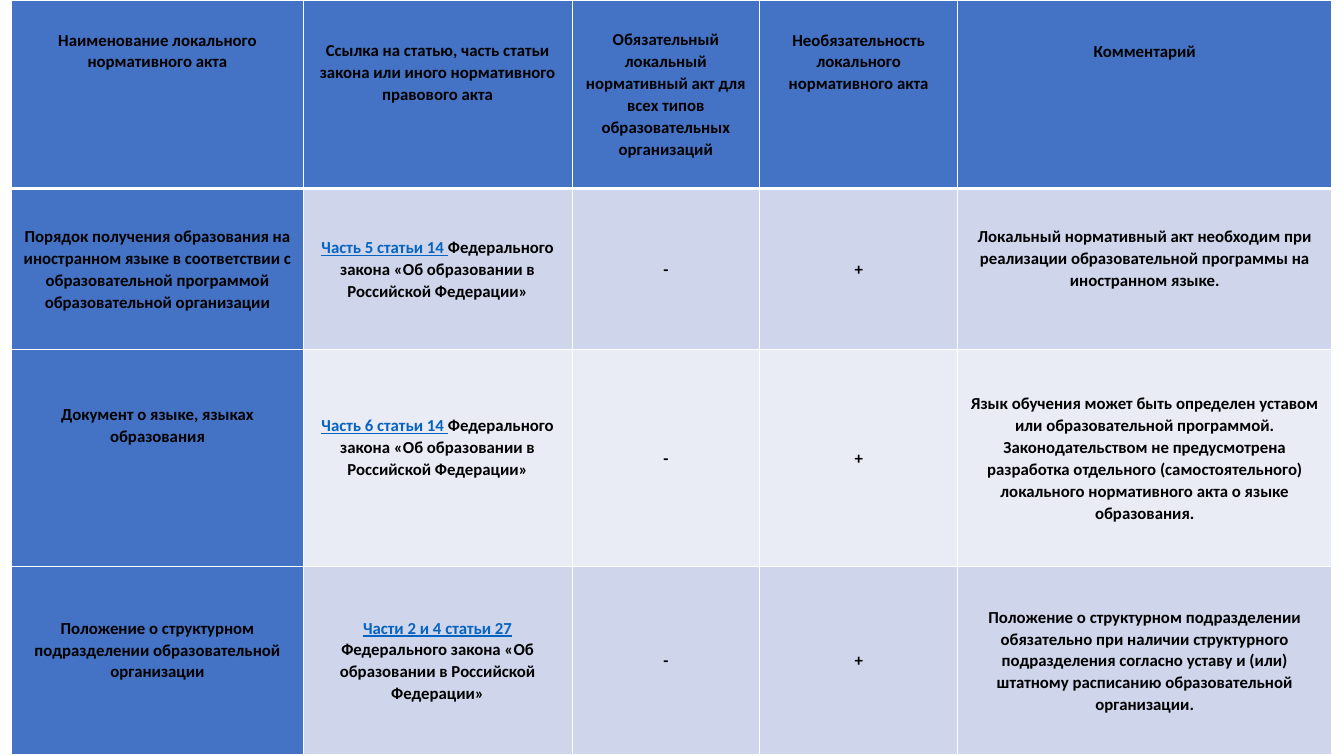
from dataclasses import dataclass

from lxml.etree import SubElement
from pptx import Presentation
from pptx.dml.color import RGBColor
from pptx.enum.text import MSO_ANCHOR, PP_ALIGN
from pptx.oxml.ns import qn
from pptx.slide import Slide
from pptx.util import Cm, Pt

BLUE = RGBColor(0x44, 0x72, 0xC4)
BAND_DARK = RGBColor(0xCF, 0xD5, 0xEA)
BAND_LIGHT = RGBColor(0xE9, 0xEB, 0xF5)
LINK = RGBColor(0x05, 0x63, 0xC1)
BLACK = RGBColor(0, 0, 0)
WHITE = RGBColor(0xFF, 0xFF, 0xFF)

COLUMN_WIDTHS = [7.34, 6.78, 4.72, 5.0, 9.42]
ROW_HEIGHTS = [4.75, 4.06, 5.46, 4.75]
LAW = "Федерального закона «Об образовании в Российской Федерации»"

HEADER = [
    "Наименование локального нормативного акта",
    "Ссылка на статью, часть статьи закона или иного нормативного правового акта",
    "Обязательный локальный нормативный акт для всех типов образовательных организаций",
    "Необязательность локального нормативного акта",
    "Комментарий",
]
ACTS = [
    (
        "Порядок получения образования на иностранном языке в соответствии с "
        "образовательной программой образовательной организации",
        "Часть 5 статьи 14 ",
        "Локальный нормативный акт необходим при реализации образовательной "
        "программы на иностранном языке.",
    ),
    (
        "Документ о языке, языках образования",
        "Часть 6 статьи 14 ",
        "Язык обучения может быть определен уставом или образовательной программой. "
        "Законодательством не предусмотрена разработка отдельного (самостоятельного) "
        "локального нормативного акта о языке образования.",
    ),
    (
        "Положение о структурном подразделении образовательной организации",
        "Части 2 и 4 статьи 27 ",
        "Положение о структурном подразделении обязательно при наличии структурного "
        "подразделения согласно уставу и (или) штатному расписанию образовательной "
        "организации.",
    ),
]
LINES_BELOW = [
    [4, 2, 0, 3, 4],
    [0, 0, 0, 0, 1],
    [3, 1, 0, 0, 0],
    [1, 0, 0, 0, 0],
]


@dataclass
class TableSlide:
    """Holds the slide together with the style of its table."""

    slide: Slide
    font_name: str = "Calibri"
    font_size: float = 12
    line_spacing: float = 1.07
    line_height: float = 0.55
    inset: float = 0.18

    def add_table(self, left, top, widths, heights):
        """Add an empty table with the given column widths and row heights."""
        frame = self.slide.shapes.add_table(
            len(heights), len(widths), Cm(left), Cm(top), Cm(sum(widths)), Cm(sum(heights))
        )
        for column, width in zip(frame.table.columns, widths):
            column.width = Cm(width)
        for row, height in zip(frame.table.rows, heights):
            row.height = Cm(height)
        return frame.table

    def fill_cell(self, cell, runs, fill, lines_below):
        """Write (text, is_link) runs centred above a number of free lines."""
        cell.fill.solid()
        cell.fill.fore_color.rgb = fill
        cell.vertical_anchor = MSO_ANCHOR.MIDDLE
        cell.margin_left = cell.margin_right = cell.margin_top = Cm(self.inset)
        cell.margin_bottom = Cm(self.inset + lines_below * self.line_height)
        paragraph = cell.text_frame.paragraphs[0]
        paragraph.alignment = PP_ALIGN.CENTER
        paragraph.line_spacing = self.line_spacing
        for text, is_link in runs:
            run = paragraph.add_run()
            run.text = text
            run.font.name = self.font_name
            run.font.size = Pt(self.font_size)
            run.font.bold = True
            run.font.underline = is_link
            run.font.color.rgb = LINK if is_link else BLACK

    def add_borders(self, cell, top, bottom):
        """Draw white cell borders, with top and bottom widths in points."""
        properties = cell._tc.get_or_add_tcPr()
        widths = {"a:lnL": 1, "a:lnR": 1, "a:lnT": top, "a:lnB": bottom}
        for index, (tag, width) in enumerate(widths.items()):
            line = SubElement(properties, qn(tag), w=str(Pt(width)))
            fill = SubElement(line, qn("a:solidFill"))
            SubElement(fill, qn("a:srgbClr"), val=str(WHITE))
            properties.insert(index, line)


def main():
    """Build the table of local regulations and save it."""
    presentation = Presentation()
    presentation.slide_width = Cm(33.87)
    presentation.slide_height = Cm(19.05)
    page = TableSlide(presentation.slides.add_slide(presentation.slide_layouts[6]))

    rows = [[[(text, False)] for text in HEADER]]
    for name, link, comment in ACTS:
        reference = [(link, True), (LAW, False)]
        rows.append(
            [[(name, False)], reference, [("-", False)], [("+", False)], [(comment, False)]]
        )

    table = page.add_table(0.3, 0, COLUMN_WIDTHS, ROW_HEIGHTS)
    for row_index, row in enumerate(rows):
        band = BAND_DARK if row_index % 2 else BAND_LIGHT
        for column_index, runs in enumerate(row):
            cell = table.cell(row_index, column_index)
            fill = BLUE if row_index == 0 or column_index == 0 else band
            page.fill_cell(cell, runs, fill, LINES_BELOW[row_index][column_index])
            page.add_borders(
                cell, top=3 if row_index == 1 else 1, bottom=3 if row_index == 0 else 1
            )

    presentation.save("out.pptx")


if __name__ == "__main__":
    main()
